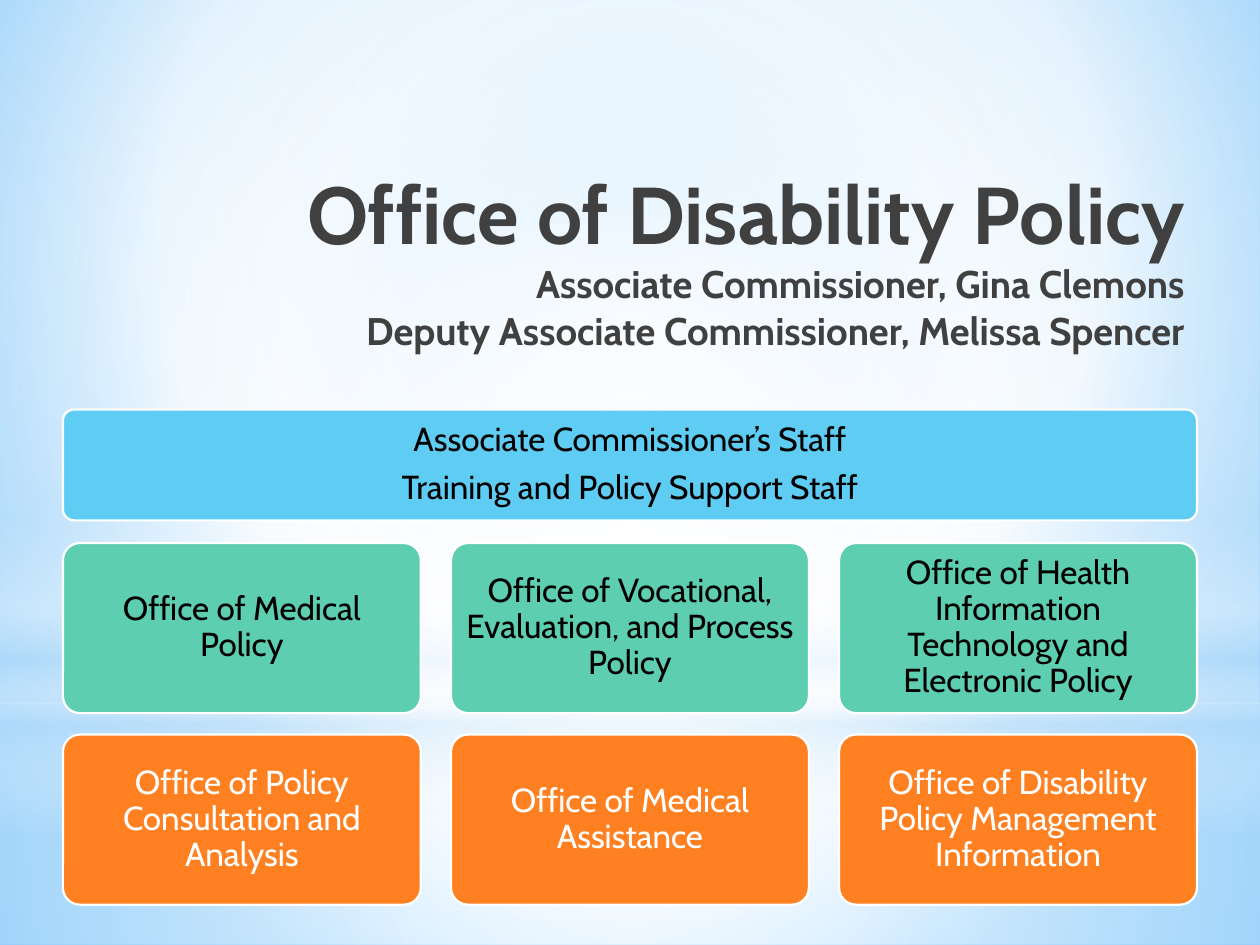
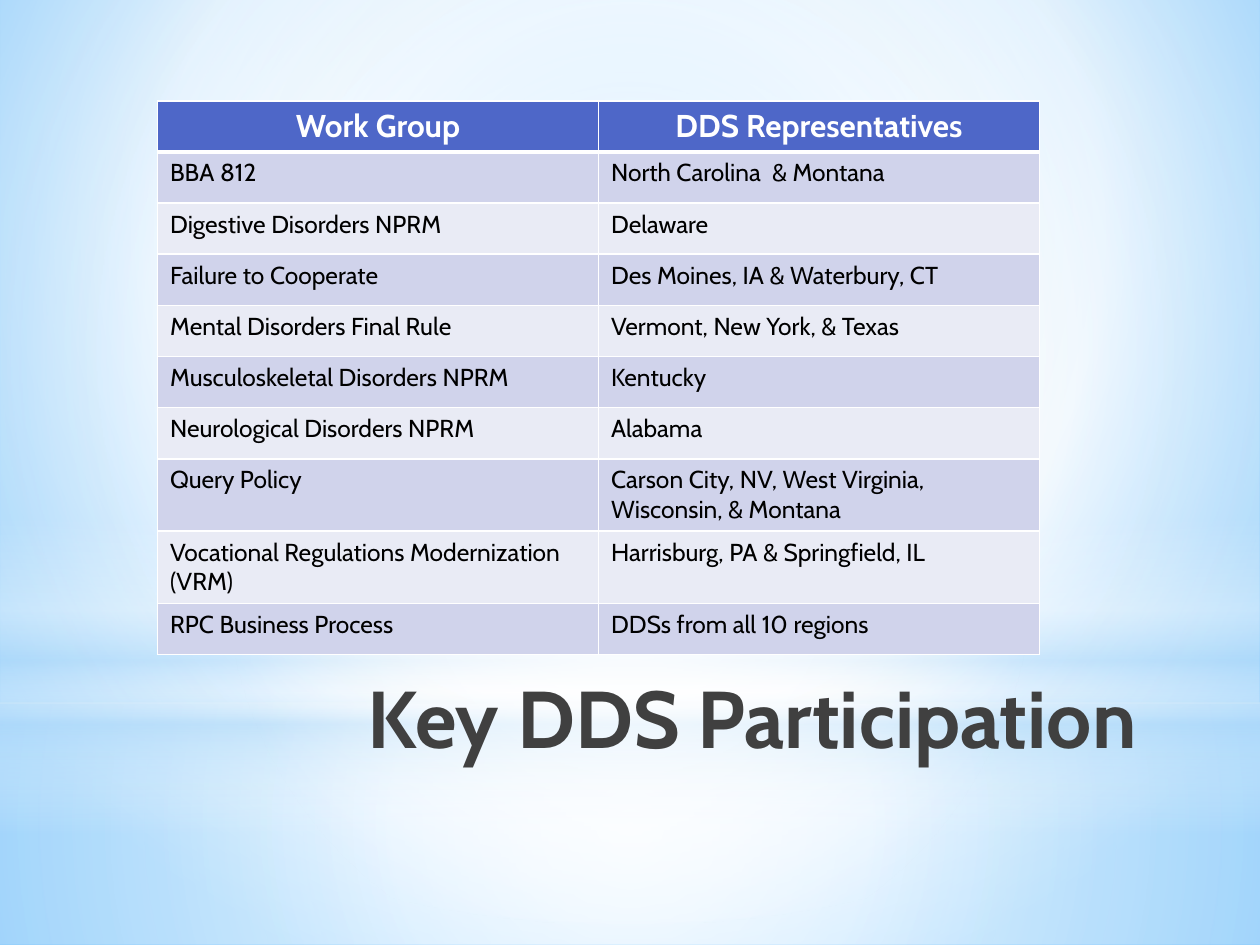
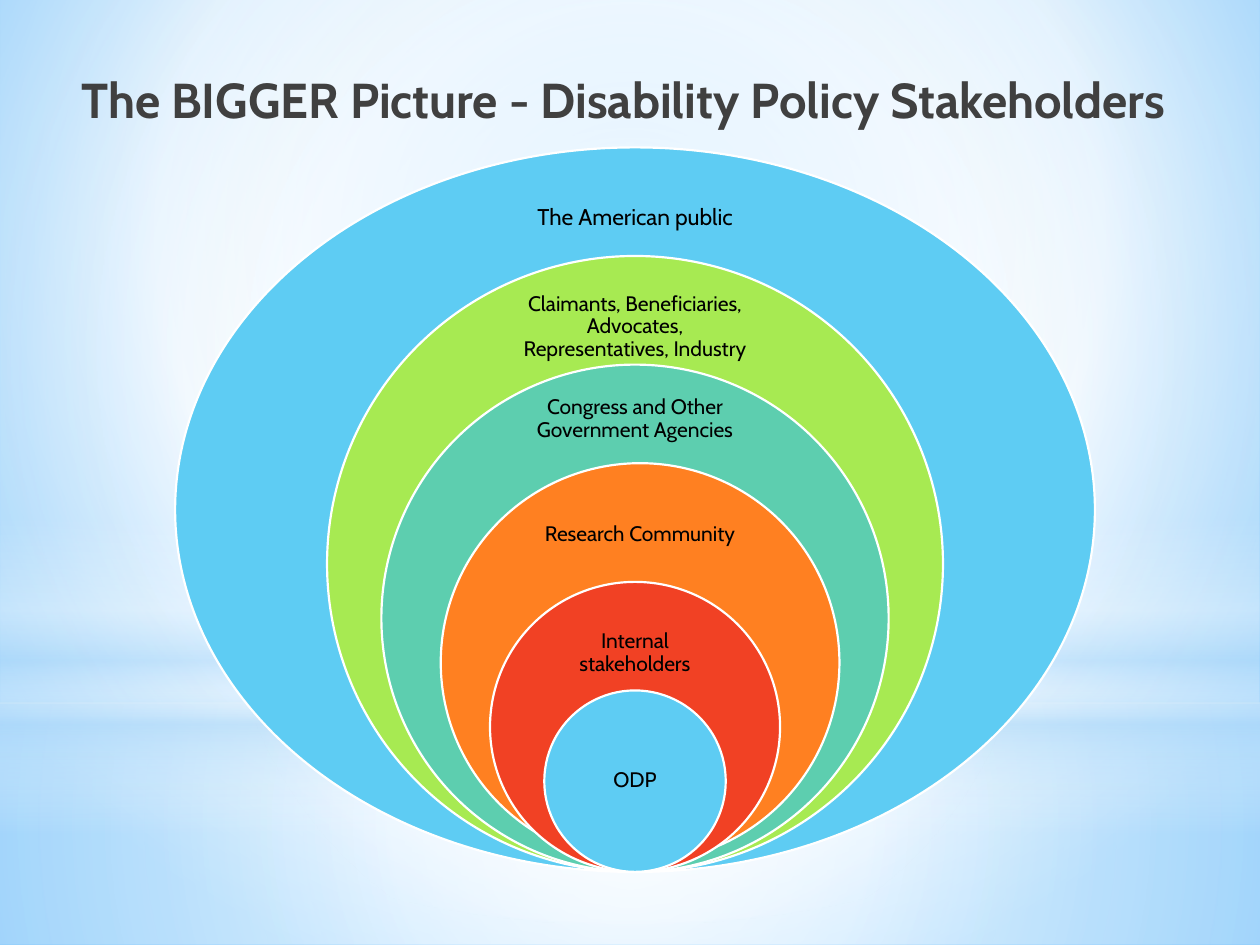
import pptx
import pptx.dml.color
import pptx.enum.shapes
import pptx.enum.text
import pptx.oxml
import pptx.oxml.ns
import pptx.util

Inches = pptx.util.Inches
Pt = pptx.util.Pt
Shape = pptx.enum.shapes.MSO_SHAPE
Align = pptx.enum.text.PP_ALIGN
Anchor = pptx.enum.text.MSO_ANCHOR
qn = pptx.oxml.ns.qn

FONT = "Cabin"
TITLE_ONLY = 5
COLORS = {
    "title": "404040", "black": "000000", "white": "FFFFFF",
    "sky": "5ECCF3", "lime": "A7EA52", "green": "5DCEAF",
    "orange": "FF8021", "red": "F14124",
    "header": "4E67C8", "band_dark": "D0D3EB", "band_light": "E9EBF5",
    "glow": "B4DCFA", "bg_center": "9ED5FF", "bg_edge": "5BB9FF",
}

# Backdrop: gradient stops are (position %, colour, opacity %)
CENTER = (50, 50, 50, 50)
BACKGROUND = [(0, "bg_center", 100), (60, "white", 100), (100, "bg_edge", 100)]
BACKDROP = [
    (Shape.RECTANGLE, (0, 5.58, 10, 1.92), CENTER,
     [(0, "white", 91), (37, "white", 76), (100, "glow", 79)]),
    (Shape.RECTANGLE, (0, 0, 10, 5.58), CENTER,
     [(0, "white", 89), (48, "white", 62), (100, "glow", 79)]),
    (Shape.RECTANGLE, (0, 4.12, 10, 2.5), None,
     [(0, "white", 0), (29, "white", 30), (45, "glow", 40),
      (55, "white", 26), (65, "glow", 60), (100, "white", 0)]),
    (Shape.OVAL, (0, 1.75, 10, 5.58), CENTER,
     [(0, "white", 100), (56, "white", 0)]),
]

# Content
STAFF = ["Associate Commissioner’s Staff", "Training and Policy Support Staff"]
OFFICE_ROWS = [
    ("green", "black", [
        "Office of Medical Policy",
        "Office of Vocational, Evaluation, and Process Policy",
        "Office of Health Information Technology and Electronic Policy"]),
    ("orange", "white", [
        "Office of Policy Consultation and Analysis",
        "Office of Medical Assistance",
        "Office of Disability Policy Management Information"]),
]
WORK_GROUPS = [
    ("Work Group", "DDS Representatives"),
    ("BBA 812", "North Carolina  & Montana"),
    ("Digestive Disorders NPRM", "Delaware"),
    ("Failure to Cooperate", "Des Moines, IA & Waterbury, CT"),
    ("Mental Disorders Final Rule", "Vermont, New York, & Texas"),
    ("Musculoskeletal Disorders NPRM", "Kentucky"),
    ("Neurological Disorders NPRM", "Alabama"),
    ("Query Policy", "Carson City, NV, West Virginia, Wisconsin, & Montana"),
    ("Vocational Regulations Modernization (VRM)",
     "Harrisburg, PA & Springfield, IL"),
    ("RPC Business Process", "DDSs from all 10 regions"),
]
# Rings from the outside in: text, colour, size, label width, label drop, nudge
RINGS = [
    ("The American public", "sky", 13, 2.74, 0.28, (0, 0)),
    ("Claimants, Beneficiaries, Advocates, Representatives, Industry",
     "lime", 12, 2.11, 0.28, (0, 0)),
    ("Congress and Other Government Agencies",
     "green", 12, 2.08, 0.15, (0, 0)),
    ("Research Community", "orange", 12, 1.71, 0.28, (0.04, -0.08)),
    ("Internal stakeholders", "red", 12, 1.5, 0.28, (0, 0)),
]


def rgb(color):
    return pptx.dml.color.RGBColor.from_string(COLORS[color])


def box(left, top, width, height):
    return [Inches(n) for n in (left, top, width, height)]


def paint_gradient(holder, stops, focus=None):
    """Replace the holder's solid fill by a radial or vertical gradient."""
    stop_xml = "".join(
        f'<a:gs pos="{pos * 1000}"><a:srgbClr val="{COLORS[color]}">'
        f'<a:alpha val="{alpha * 1000}"/></a:srgbClr></a:gs>'
        for pos, color, alpha in stops)
    if focus:
        sides = " ".join(f'{side}="{n * 1000}"' for side, n in zip("ltrb", focus))
        direction = f'<a:path path="circle"><a:fillToRect {sides}/></a:path>'
    else:
        direction = '<a:lin ang="5400000" scaled="0"/>'
    gradient = pptx.oxml.parse_xml(
        f'<a:gradFill {pptx.oxml.ns.nsdecls("a")} rotWithShape="1">'
        f"<a:gsLst>{stop_xml}</a:gsLst>{direction}</a:gradFill>")
    solid = holder.find(".//" + qn("a:solidFill"))
    solid.getparent().replace(solid, gradient)


def add_backdrop(master, slide):
    """Build the glow shapes and place them behind everything on the master."""
    master.background.fill.solid()
    master.background.fill.fore_color.rgb = rgb("white")
    paint_gradient(master.element.find(".//" + qn("p:bg")), BACKGROUND,
                   (20, 10, 20, 60))
    for i, (kind, place, focus, stops) in enumerate(BACKDROP):
        glow = add_filled(slide, kind, place, "white")
        glow.line.fill.background()
        paint_gradient(glow.element.spPr, stops, focus)
        glow.element.nvSpPr.cNvPr.set("id", str(100 + i))
        master.shapes.element.insert(2 + i, glow.element)


def style_font(font, size, color, bold=False):
    font.name = FONT
    font.size = Pt(size)
    font.bold = bold
    font.color.rgb = rgb(color)


def add_filled(slide, kind, place, color):
    shape = slide.shapes.add_shape(kind, *box(*place))
    shape.shadow.inherit = False
    shape.fill.solid()
    shape.fill.fore_color.rgb = rgb(color)
    shape.line.color.rgb = rgb("white")
    shape.line.width = Pt(1.25)
    return shape


def write_centered(shape, lines, size, color, inset):
    frame = shape.text_frame
    frame.word_wrap = True
    frame.vertical_anchor = Anchor.MIDDLE
    frame.margin_left = frame.margin_right = Inches(inset)
    frame.margin_top = frame.margin_bottom = Inches(inset)
    frame.text = "\n".join(lines)
    for paragraph in frame.paragraphs:
        paragraph.alignment = Align.CENTER
        paragraph.line_spacing = 0.9
        paragraph.space_after = Pt(size * 0.35)
        style_font(paragraph.font, size, color)


def add_card(slide, place, fill, lines, color):
    card = add_filled(slide, Shape.ROUNDED_RECTANGLE, place, fill)
    card.adjustments[0] = 0.1
    write_centered(card, lines, 19, color, 0.08)


def set_title(slide, text, place, size=46, align=Align.RIGHT, subtitle=None):
    title = slide.shapes.title
    title.left, title.top, title.width, title.height = box(*place)
    frame = title.text_frame
    frame.auto_size = pptx.enum.text.MSO_AUTO_SIZE.NONE
    frame.vertical_anchor = Anchor.TOP
    heading = frame.paragraphs[0]
    heading.alignment = align
    style_font(heading.font, size, "title", True)
    heading.add_run().text = text
    for line in subtitle or []:
        heading.add_line_break()
        run = heading.add_run()
        run.text = line
        run.font.size = Pt(22)


def set_borders(cell, bottom):
    properties = cell._tc.get_or_add_tcPr()
    for side, width in (("L", 1), ("R", 1), ("T", 1), ("B", bottom)):
        properties.append(pptx.oxml.parse_xml(
            f'<a:ln{side} {pptx.oxml.ns.nsdecls("a")} w="{Pt(width)}">'
            f'<a:solidFill><a:srgbClr val="{COLORS["white"]}"/></a:solidFill>'
            f"</a:ln{side}>"))


def add_work_group_table(slide):
    table = slide.shapes.add_table(
        len(WORK_GROUPS), 2, *box(1.25, 0.8, 7, 4.06)).table
    table.horz_banding = False
    for r, texts in enumerate(WORK_GROUPS):
        is_header = r == 0
        band = "band_dark" if r % 2 else "band_light"
        for c, text in enumerate(texts):
            cell = table.cell(r, c)
            set_borders(cell, 3 if r < 1 else 1)
            cell.fill.solid()
            cell.fill.fore_color.rgb = rgb("header" if is_header else band)
            cell.text = text
            paragraph = cell.text_frame.paragraphs[0]
            if is_header:
                paragraph.alignment = Align.CENTER
                style_font(paragraph.font, 18, "white", True)
            else:
                style_font(paragraph.font, 14, "black")


def add_offices(slide):
    left, full_width, width, height = 0.5, 9, 2.84, 1.35
    column_step = (full_width - width) / 2
    add_card(slide, (left, 3.25, full_width, 0.88), "sky", STAFF, "black")
    for r, (fill, color, offices) in enumerate(OFFICE_ROWS):
        for c, office in enumerate(offices):
            place = (left + c * column_step, 4.31 + r * 1.52, width, height)
            add_card(slide, place, fill, [office], color)


def add_stakeholder_rings(slide):
    center, bottom, outer, core = 5.04, 6.92, 5.75, 1.44
    step = (outer - core) / len(RINGS)
    for i, (text, fill, size, label_width, drop, (dx, dy)) in enumerate(RINGS):
        height = outer - i * step
        width = height if i else 7.3
        middle, top = center + dx, bottom - height + dy
        add_filled(slide, Shape.OVAL,
                   (middle - width / 2, top, width, height), fill)
        label = slide.shapes.add_textbox(
            *box(middle - label_width / 2, top + drop, label_width, 0.57))
        write_centered(label, [text], size, "black", 0.09)
    odp = add_filled(slide, Shape.OVAL,
                     (center - core / 2, bottom - core, core, core), "sky")
    write_centered(odp, ["ODP"], 12, "black", 0.09)


def main():
    deck = pptx.Presentation()
    deck.slide_width, deck.slide_height = Inches(10), Inches(7.5)
    layout = deck.slide_layouts[TITLE_ONLY]
    offices, participation, stakeholders = [
        deck.slides.add_slide(layout) for _ in range(3)]
    add_backdrop(deck.slide_master, offices)

    # Office structure
    set_title(offices, "Office of Disability Policy", (0.5, 1.25, 9, 1.67),
              subtitle=["Associate Commissioner, Gina Clemons",
                        "Deputy Associate Commissioner, Melissa Spencer"])
    add_offices(offices)

    # Work groups
    set_title(participation, "Key DDS Participation", (2, 5.25, 7.12, 1.25))
    add_work_group_table(participation)

    # Stakeholders
    set_title(stakeholders,
              "The BIGGER Picture - Disability Policy Stakeholders",
              (0.17, 0.5, 9.55, 0.57), 28, Align.CENTER)
    add_stakeholder_rings(stakeholders)

    deck.save("out.pptx")


if __name__ == "__main__":
    main()
